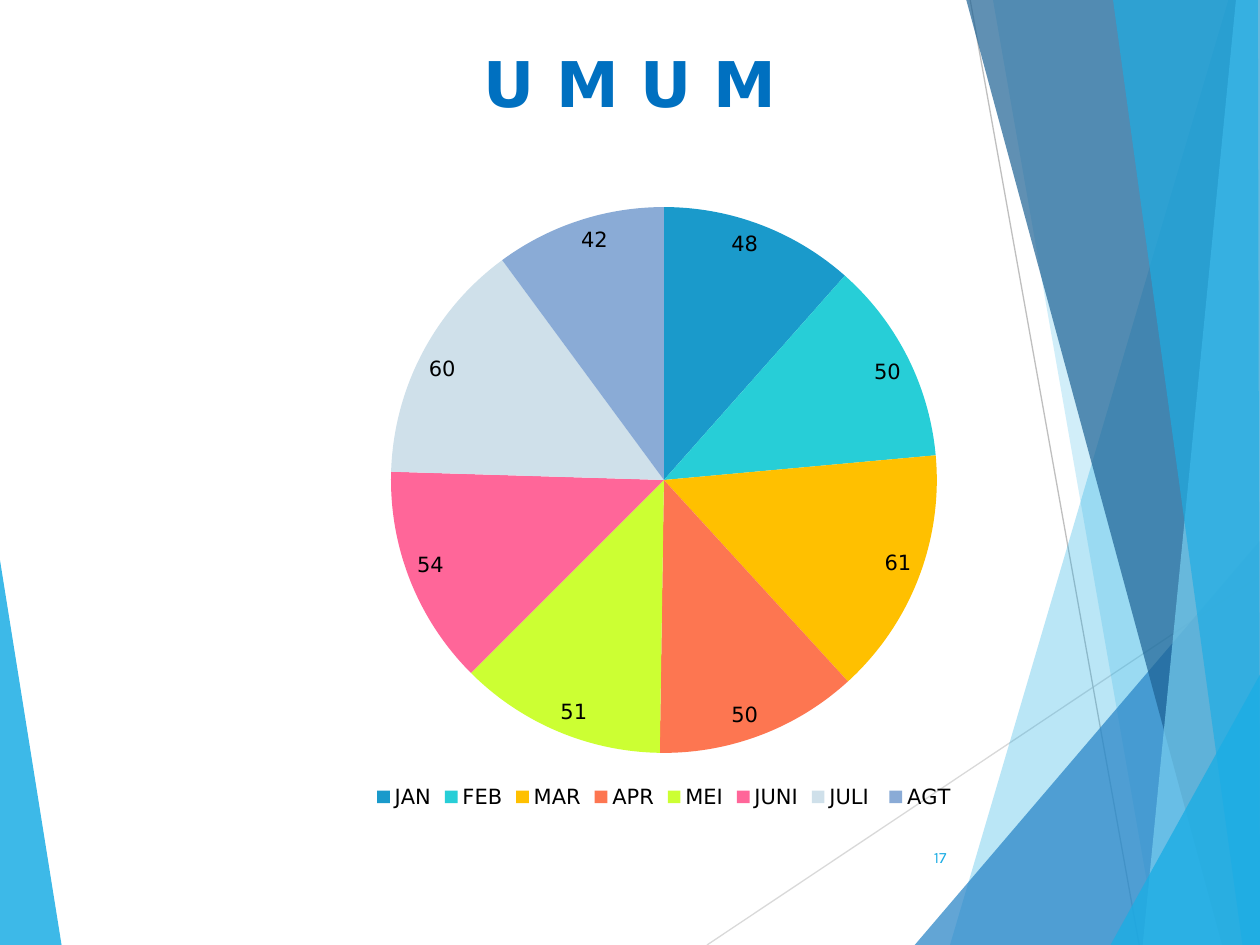
from lxml.etree import SubElement
from pptx import Presentation
from pptx.chart.data import CategoryChartData
from pptx.dml.color import RGBColor
from pptx.enum.chart import XL_CHART_TYPE, XL_LABEL_POSITION, XL_LEGEND_POSITION
from pptx.enum.shapes import MSO_CONNECTOR
from pptx.enum.text import MSO_ANCHOR, PP_ALIGN
from pptx.oxml.ns import qn
from pptx.util import Pt

COLORS = {
    "sky": "1CADE4", "blue": "2683C6", "navy": "1D6294", "pale": "77CEEF",
    "title": "0070C0", "text": "000000", "line": "D9D9D9", "dark_line": "BFBFBF",
}
HEADING_FONT, BODY_FONT = "DejaVu Sans", "Karla"
WIDTH, HEIGHT = 720, 540

# Month, value, slice colour
MONTHS = [
    ("JAN", 48, "1A9ACB"), ("FEB", 50, "27CED7"), ("MAR", 61, "FFC000"),
    ("APR", 50, "FD7651"), ("MEI", 51, "CCFF33"), ("JUNI", 54, "FF6699"),
    ("JULI ", 60, "CFE0EA"), ("AGT", 42, "8AABD6"),
]

# Corners, colour, opacity in percent; back to front
LEFT_FACET = ([(0, 320), (35.2, HEIGHT), (0, HEIGHT)], "sky", 85)
RIGHT_FACETS = [
    ([(702, 0), (542.9, HEIGHT), (WIDTH, HEIGHT), (WIDTH, 0)], "sky", 30),
    ([(567.4, 0), (661.7, HEIGHT), (WIDTH, HEIGHT), (WIDTH, 0)], "sky", 20),
    ([(522.7, HEIGHT), (WIDTH, 309), (WIDTH, HEIGHT)], "blue", 72),
    ([(552.2, 0), (698.4, HEIGHT), (WIDTH, HEIGHT), (WIDTH, 0)], "navy", 70),
    ([(706.3, 0), (653, HEIGHT), (WIDTH, HEIGHT), (WIDTH, 0)], "pale", 70),
    ([(636, 0), (710, HEIGHT), (WIDTH, HEIGHT), (718.8, 0)], "sky", 65),
    ([(634.6, HEIGHT), (WIDTH, 385.5), (WIDTH, HEIGHT)], "sky", 80),
]


class SlideBuilder:
    def __init__(self, slide):
        self.slide = slide

    def format_font(self, font, name, size, color, bold=False):
        font.name, font.size, font.bold = name, Pt(size), bold
        font.color.rgb = RGBColor.from_string(COLORS[color])

    def facet(self, corners, color, opacity):
        points = [(Pt(x), Pt(y)) for x, y in corners]
        builder = self.slide.shapes.build_freeform(*points[0])
        builder.add_line_segments(points[1:], close=True)
        shape = builder.convert_to_shape()
        shape.shadow.inherit = False
        shape.line.fill.background()
        shape.fill.solid()
        shape.fill.fore_color.rgb = RGBColor.from_string(COLORS[color])
        color_element = shape.element.spPr.find(qn("a:solidFill"))[0]
        SubElement(color_element, qn("a:alpha"), val=str(opacity * 1000))

    def line(self, x1, y1, x2, y2, color):
        connector = self.slide.shapes.add_connector(
            MSO_CONNECTOR.STRAIGHT, Pt(x1), Pt(y1), Pt(x2), Pt(y2))
        connector.line.width = Pt(0.75)
        connector.line.color.rgb = RGBColor.from_string(COLORS[color])
        SubElement(connector.element.spPr, qn("a:effectLst"))

    def title(self, text, left, top, width, height):
        title = self.slide.shapes.title
        title.left, title.top = Pt(left), Pt(top)
        title.width, title.height = Pt(width), Pt(height)
        title.text_frame.text = text
        title.text_frame.vertical_anchor = MSO_ANCHOR.TOP
        paragraph = title.text_frame.paragraphs[0]
        paragraph.alignment = PP_ALIGN.CENTER
        self.format_font(paragraph.font, HEADING_FONT, 36, "title", bold=True)
        # Bring the title in front of the facets
        title.element.getparent().append(title.element)

    def pie(self, months, left, top, width, height):
        chart_data = CategoryChartData()
        chart_data.categories = [name for name, _, _ in months]
        chart_data.add_series("Series 1", [value for _, value, _ in months])
        chart = self.slide.shapes.add_chart(
            XL_CHART_TYPE.PIE, Pt(left), Pt(top), Pt(width), Pt(height), chart_data).chart
        self.format_font(chart.font, BODY_FONT, 18, "text")
        chart.has_title = False
        chart.has_legend = True
        chart.legend.position = XL_LEGEND_POSITION.BOTTOM
        chart.legend.include_in_layout = False
        self.format_font(chart.legend.font, HEADING_FONT, 12, "text")
        plot = chart.plots[0]
        plot.vary_by_categories = True
        for index, (_, _, color) in enumerate(months):
            fill = plot.series[0].points[index].format.fill
            fill.solid()
            fill.fore_color.rgb = RGBColor.from_string(color)
        labels = plot.series[0].data_labels
        labels.show_value = True
        labels.position = XL_LABEL_POSITION.INSIDE_END
        self.format_font(labels.font, HEADING_FONT, 12, "text")

    def page_number(self, text, left, top, width, height):
        frame = self.slide.shapes.add_textbox(
            Pt(left), Pt(top), Pt(width), Pt(height)).text_frame
        frame.word_wrap = True
        frame.vertical_anchor = MSO_ANCHOR.MIDDLE
        frame.text = text
        paragraph = frame.paragraphs[0]
        paragraph.alignment = PP_ALIGN.RIGHT
        self.format_font(paragraph.font, BODY_FONT, 9, "sky")


def main():
    presentation = Presentation()
    presentation.slide_width, presentation.slide_height = Pt(WIDTH), Pt(HEIGHT)
    builder = SlideBuilder(presentation.slides.add_slide(presentation.slide_layouts[5]))

    # Background decoration
    builder.facet(*LEFT_FACET)
    builder.line(404, HEIGHT, WIDTH, 329, "line")
    builder.line(554.4, 0, 651, HEIGHT, "dark_line")
    for facet in RIGHT_FACETS:
        builder.facet(*facet)

    # Content
    builder.title("U M U M", 36, 21.6, 648, 90)
    builder.pie(MONTHS, 55.4, 108.4, 648, 357)
    builder.page_number("17", 507.6, 475.7, 40.3, 28.8)

    presentation.save("out.pptx")


if __name__ == "__main__":
    main()
